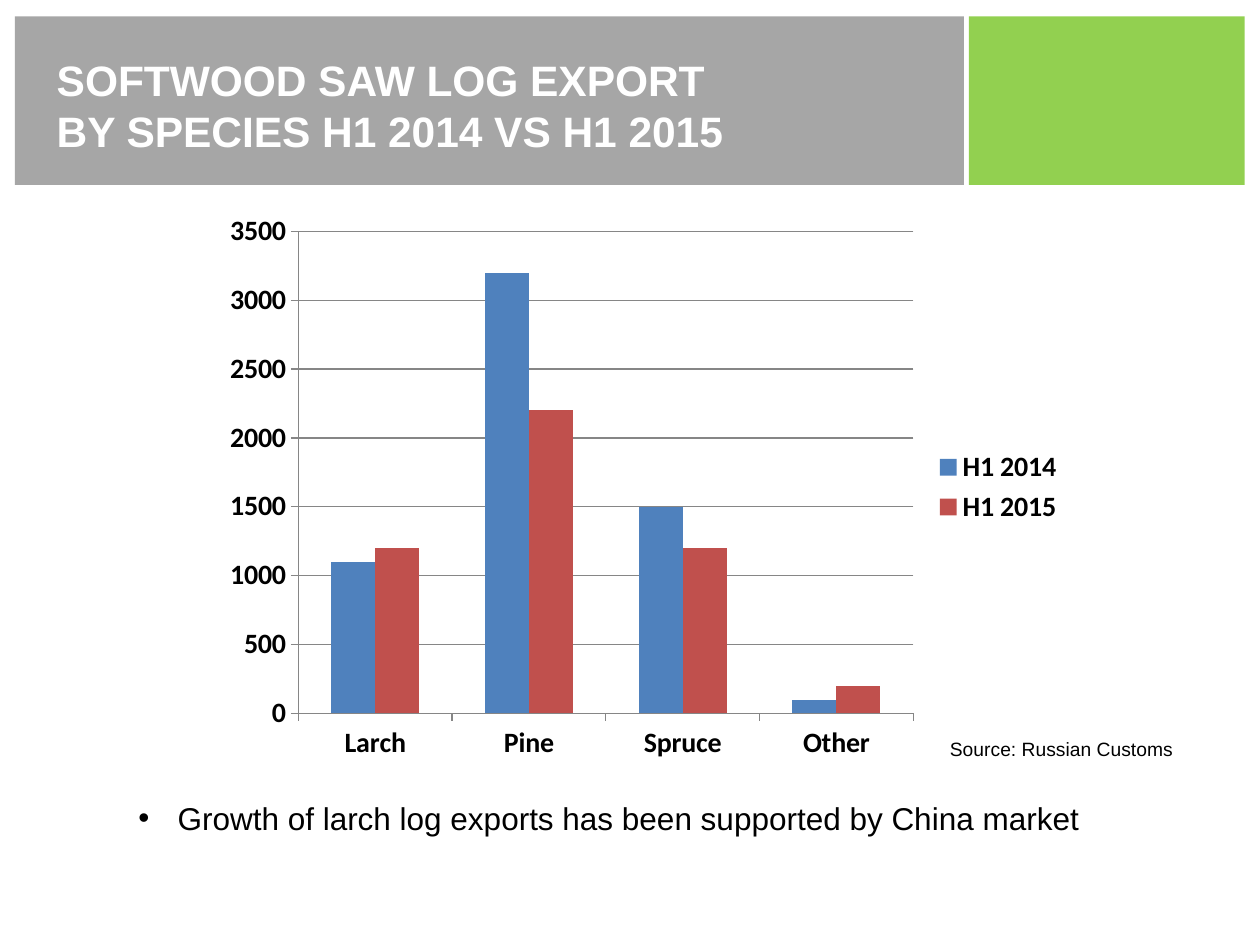
from lxml import etree
from pptx import Presentation
from pptx.chart.data import CategoryChartData
from pptx.dml.color import RGBColor
from pptx.enum.chart import XL_CHART_TYPE, XL_LEGEND_POSITION, XL_TICK_MARK
from pptx.enum.shapes import MSO_SHAPE
from pptx.enum.text import MSO_ANCHOR, MSO_AUTO_SIZE, PP_ALIGN
from pptx.oxml.ns import qn
from pptx.util import Cm, Pt

RECTANGLE = MSO_SHAPE.RECTANGLE
COLUMNS = XL_CHART_TYPE.COLUMN_CLUSTERED
LEGEND_RIGHT = XL_LEGEND_POSITION.RIGHT
TICK_OUTSIDE = XL_TICK_MARK.OUTSIDE
TICK_NONE = XL_TICK_MARK.NONE
TOP, MIDDLE = MSO_ANCHOR.TOP, MSO_ANCHOR.MIDDLE
LEFT, JUSTIFY = PP_ALIGN.LEFT, PP_ALIGN.JUSTIFY
NO_AUTOFIT = MSO_AUTO_SIZE.NONE

GREY, GREEN, WHITE, BLACK = "A6A6A6", "92D050", "FFFFFF", "000000"
AXIS_GREY = "868686"
CATEGORIES = ["Larch", "Pine", "Spruce", "Other"]
SERIES = [
    ("H1 2014", [1100, 3200, 1500, 100], "4F81BD"),
    ("H1 2015", [1200, 2200, 1200, 200], "C0504D"),
]


def color(hex_string):
    return RGBColor.from_string(hex_string)


def set_attributes(target, values):
    for name, value in values.items():
        setattr(target, name, value)


def format_font(font, size, hex_color=BLACK, bold=False, name="Arial"):
    set_attributes(font, {"size": Pt(size), "bold": bold, "name": name})
    font.color.rgb = color(hex_color)


def place(shape, left, top, width, height):
    set_attributes(shape, {"left": Cm(left), "top": Cm(top),
                           "width": Cm(width), "height": Cm(height)})


def bring_to_front(shape):
    shape.element.getparent().append(shape.element)


def add_header(slide, left, top, width, height):
    # Grey title bar and green block, separated by a narrow gap
    gap, green_width = 0.1, 5.56
    grey_width = width - green_width - gap
    group = slide.shapes.add_group_shape()
    for offset, bar_width, fill in ((0, grey_width, GREY),
                                    (grey_width + gap, green_width, GREEN)):
        bar = group.shapes.add_shape(RECTANGLE, Cm(left + offset), Cm(top),
                                     Cm(bar_width), Cm(height))
        bar.shadow.inherit = False
        bar.fill.solid()
        bar.fill.fore_color.rgb = color(fill)
        bar.line.fill.background()

    # Title
    title = slide.shapes.title
    place(title, left + 0.59, top, 14.22, 2.9)
    bring_to_front(title)
    frame = title.text_frame
    set_attributes(frame, {"word_wrap": True, "auto_size": NO_AUTOFIT,
                           "vertical_anchor": MIDDLE, "margin_top": Cm(0.8)})
    frame.text = "SOFTWOOD SAW LOG EXPORT\vBY SPECIES H1 2014 VS H1 2015"
    paragraph = frame.paragraphs[0]
    paragraph.alignment = LEFT
    for run in paragraph.runs:
        format_font(run.font, 24.3, WHITE, bold=True)


def add_bullet_list(slide, left, top, width, height):
    body = slide.placeholders[1]
    place(body, left, top, width, height)
    bring_to_front(body)
    frame = body.text_frame
    set_attributes(frame, {"word_wrap": True, "auto_size": NO_AUTOFIT,
                           "vertical_anchor": TOP, "margin_top": Cm(1),
                           "margin_left": Cm(0.1), "margin_right": Cm(0.1),
                           "margin_bottom": 0})
    frame.text = "Growth of larch log exports has been supported by China market"
    paragraph = frame.paragraphs[0]
    set_attributes(paragraph, {"alignment": JUSTIFY, "space_before": Pt(0)})
    properties = paragraph._p.get_or_add_pPr()
    properties.set("marL", str(Cm(0.79)))
    properties.set("indent", str(-Cm(0.79)))
    etree.SubElement(properties, qn("a:buFont")).set("typeface", "Arial")
    etree.SubElement(properties, qn("a:buChar")).set("char", "•")
    format_font(paragraph.runs[0].font, 18)


def add_export_chart(slide, left, top, width, height):
    data = CategoryChartData()
    data.categories = CATEGORIES
    for name, values, _ in SERIES:
        data.add_series(name, values)
    chart = slide.shapes.add_chart(COLUMNS, Cm(left), Cm(top), Cm(width),
                                   Cm(height), data).chart
    chart.has_title = False
    format_font(chart.font, 10, name="Calibri")

    # Columns
    plot = chart.plots[0]
    set_attributes(plot, {"gap_width": 150, "overlap": 0,
                          "vary_by_categories": False})
    for series, (_, _, fill) in zip(plot.series, SERIES):
        series.format.fill.solid()
        series.format.fill.fore_color.rgb = color(fill)

    # Axes
    value_axis = chart.value_axis
    set_attributes(value_axis, {"minimum_scale": 0, "maximum_scale": 3500,
                                "major_unit": 500,
                                "has_major_gridlines": True})
    for axis in (chart.category_axis, value_axis):
        set_attributes(axis, {"major_tick_mark": TICK_OUTSIDE,
                              "minor_tick_mark": TICK_NONE})
        format_font(axis.tick_labels.font, 16, bold=True, name="Calibri")
        axis.format.line.color.rgb = color(AXIS_GREY)
    value_axis.major_gridlines.format.line.color.rgb = color(AXIS_GREY)

    # Legend
    chart.has_legend = True
    set_attributes(chart.legend, {"position": LEGEND_RIGHT,
                                  "include_in_layout": False})
    format_font(chart.legend.font, 16, bold=True, name="Calibri")


def add_source_note(slide, left, top, width, height):
    box = slide.shapes.add_textbox(Cm(left), Cm(top), Cm(width), Cm(height))
    frame = box.text_frame
    frame.word_wrap = False
    frame.text = "Source: Russian Customs"
    format_font(frame.paragraphs[0].runs[0].font, 11)


def main():
    presentation = Presentation()
    set_attributes(presentation, {"slide_width": Cm(25.4),
                                  "slide_height": Cm(19.05)})
    slide = presentation.slides.add_slide(presentation.slide_layouts[1])
    add_header(slide, 0.3, 0.33, 24.79, 3.4)
    add_bullet_list(slide, 2.69, 15.11, 21.41, 2.74)
    add_export_chart(slide, 4.29, 4.09, 17.4, 11.46)
    add_source_note(slide, 18.9, 14.73, 5.03, 0.74)
    presentation.save("out.pptx")


if __name__ == "__main__":
    main()
